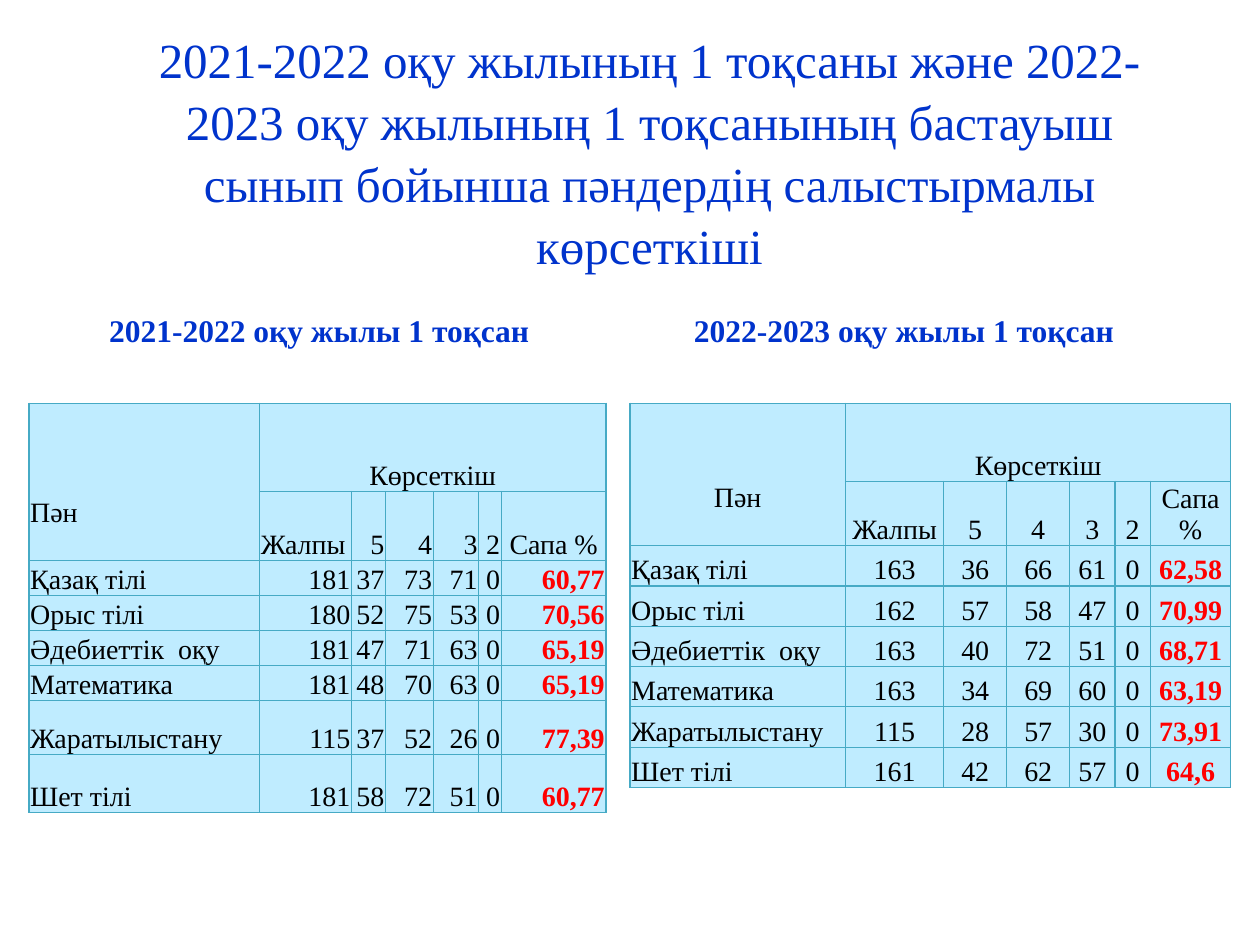
import pptx
import pptx.dml.color
import pptx.enum.text
import pptx.oxml
import pptx.oxml.ns
import pptx.util

COLORS = {"blue": "0033CC", "black": "000000", "red": "FF0000", "cell": "BFECFF", "border": "46AAC5"}
FONT = "Times New Roman"
COLUMNS, ROWS = 100, 75
ALIGN = pptx.enum.text.PP_ALIGN
ANCHOR = pptx.enum.text.MSO_ANCHOR

SUBJECTS = ["Қазақ тілі", "Орыс тілі", "Әдебиеттік  оқу", "Математика", "Жаратылыстану", "Шет тілі"]
HEADINGS = ["Жалпы", "5", "4", "3", "2", "Сапа %"]
RESULTS_2021 = [
    [181, 37, 73, 71, 0, "60,77"],
    [180, 52, 75, 53, 0, "70,56"],
    [181, 47, 71, 63, 0, "65,19"],
    [181, 48, 70, 63, 0, "65,19"],
    [115, 37, 52, 26, 0, "77,39"],
    [181, 58, 72, 51, 0, "60,77"],
]
RESULTS_2022 = [
    [163, 36, 66, 61, 0, "62,58"],
    [162, 57, 58, 47, 0, "70,99"],
    [163, 40, 72, 51, 0, "68,71"],
    [163, 34, 69, 60, 0, "63,19"],
    [115, 28, 57, 30, 0, "73,91"],
    [161, 42, 62, 57, 0, "64,6"],
]


class Deck:
    def __init__(self):
        self.prs = pptx.Presentation()
        self.prs.slide_width = pptx.util.Inches(10)
        self.prs.slide_height = pptx.util.Inches(7.5)
        self.s = self.prs.slides.add_slide(self.prs.slide_layouts[5])

    def x(self, columns):
        return round(self.prs.slide_width * columns / COLUMNS)

    def y(self, rows):
        return round(self.prs.slide_height * rows / ROWS)

    def box(self, left, top, width, height):
        return self.x(left), self.y(top), self.x(width), self.y(height)

    def set_text(self, tf, text, size, color, align, bold=False):
        tf.word_wrap = True
        p = tf.paragraphs[0]
        p.text = text
        p.alignment = align
        p.font.name = FONT
        p.font.size = pptx.util.Pt(size)
        p.font.bold = bold
        p.font.color.rgb = pptx.dml.color.RGBColor.from_string(COLORS[color])
        return p

    def title(self, text, *place):
        sp = self.s.shapes.title
        sp.left, sp.top, sp.width, sp.height = self.box(*place)
        tf = sp.text_frame
        tf.auto_size = pptx.enum.text.MSO_AUTO_SIZE.NONE
        tf.vertical_anchor = ANCHOR.MIDDLE
        self.set_text(tf, text, 28, "blue", ALIGN.CENTER).line_spacing = 1.05

    def caption(self, text, *place):
        sp = self.s.shapes.add_textbox(*self.box(*place))
        self.set_text(sp.text_frame, text, 18, "blue", ALIGN.CENTER, True)

    def style_cell(self, cell):
        cell.margin_left = cell.margin_right = cell.margin_top = self.x(0.1)
        cell.margin_bottom = 0
        cell.vertical_anchor = ANCHOR.BOTTOM
        tc_pr = cell._tc.get_or_add_tcPr()
        for side in ("lnL", "lnR", "lnT", "lnB"):
            tc_pr.append(pptx.oxml.parse_xml(
                f'<a:{side} {pptx.oxml.ns.nsdecls("a")} w="{pptx.util.Pt(0.75)}">'
                f'<a:solidFill><a:srgbClr val="{COLORS["border"]}"/></a:solidFill></a:{side}>'))
        cell.fill.solid()
        cell.fill.fore_color.rgb = pptx.dml.color.RGBColor.from_string(COLORS["cell"])

    def results_table(self, left, top, widths, heights, results, aligns):
        subject_align, total_align, number_align = aligns
        place = self.box(left, top, sum(widths), sum(heights))
        table = self.s.shapes.add_table(len(heights), len(widths), *place).table
        table.first_row = table.horz_banding = False
        for column, width in zip(table.columns, widths):
            column.width = self.x(width)
        for row, height in zip(table.rows, heights):
            row.height = self.y(height)
        for cell in table.iter_cells():
            self.style_cell(cell)
            self.set_text(cell.text_frame, "", 16, "black", ALIGN.LEFT)

        subject = table.cell(0, 0)
        subject.merge(table.cell(1, 0))
        subject.margin_bottom = self.y(2.55)
        self.set_text(subject.text_frame, "Пән", 16, "black", subject_align)
        indicator = table.cell(0, 1)
        indicator.merge(table.cell(0, len(HEADINGS)))
        self.set_text(indicator.text_frame, "Көрсеткіш", 16, "black", ALIGN.CENTER)

        last = len(HEADINGS)
        heading_aligns = [total_align] + [number_align] * (last - 2) + [ALIGN.CENTER]
        for c, (text, align) in enumerate(zip(HEADINGS, heading_aligns), 1):
            self.set_text(table.cell(1, c).text_frame, text, 16, "black", align)
        for r, (name, values) in enumerate(zip(SUBJECTS, results), 2):
            self.set_text(table.cell(r, 0).text_frame, name, 16, "black", ALIGN.LEFT)
            for c, value in enumerate(values, 1):
                quality = c == last
                self.set_text(table.cell(r, c).text_frame, str(value), 16,
                              "red" if quality else "black", number_align, quality)


def main():
    deck = Deck()
    deck.title("2021-2022 оқу жылының 1 тоқсаны және 2022-2023 оқу жылының 1 тоқсанының "
               "бастауыш сынып бойынша пәндердің салыстырмалы көрсеткіші", 7.8, 3.9, 87.5, 16.1)
    deck.results_table(50, 32, [17.1, 7.8, 5, 5, 3.6, 2.8, 6.4], [6.2, 5] + [3.2] * 6,
                       RESULTS_2022, [ALIGN.CENTER] * 3)
    deck.caption("2022-2023 оқу жылы 1 тоқсан", 46.9, 24.2, 49.7, 4)
    deck.results_table(2.3, 32, [18.3, 7.3, 2.7, 3.8, 3.6, 1.8, 8.3],
                       [7, 5.5, 2.7, 2.8, 2.7, 2.7, 4.3, 4.6],
                       RESULTS_2021, [ALIGN.LEFT, ALIGN.LEFT, ALIGN.RIGHT])
    deck.caption("2021-2022 оқу жылы 1 тоқсан", 2.3, 24.2, 46.1, 4)
    deck.prs.save("out.pptx")


if __name__ == "__main__":
    main()
